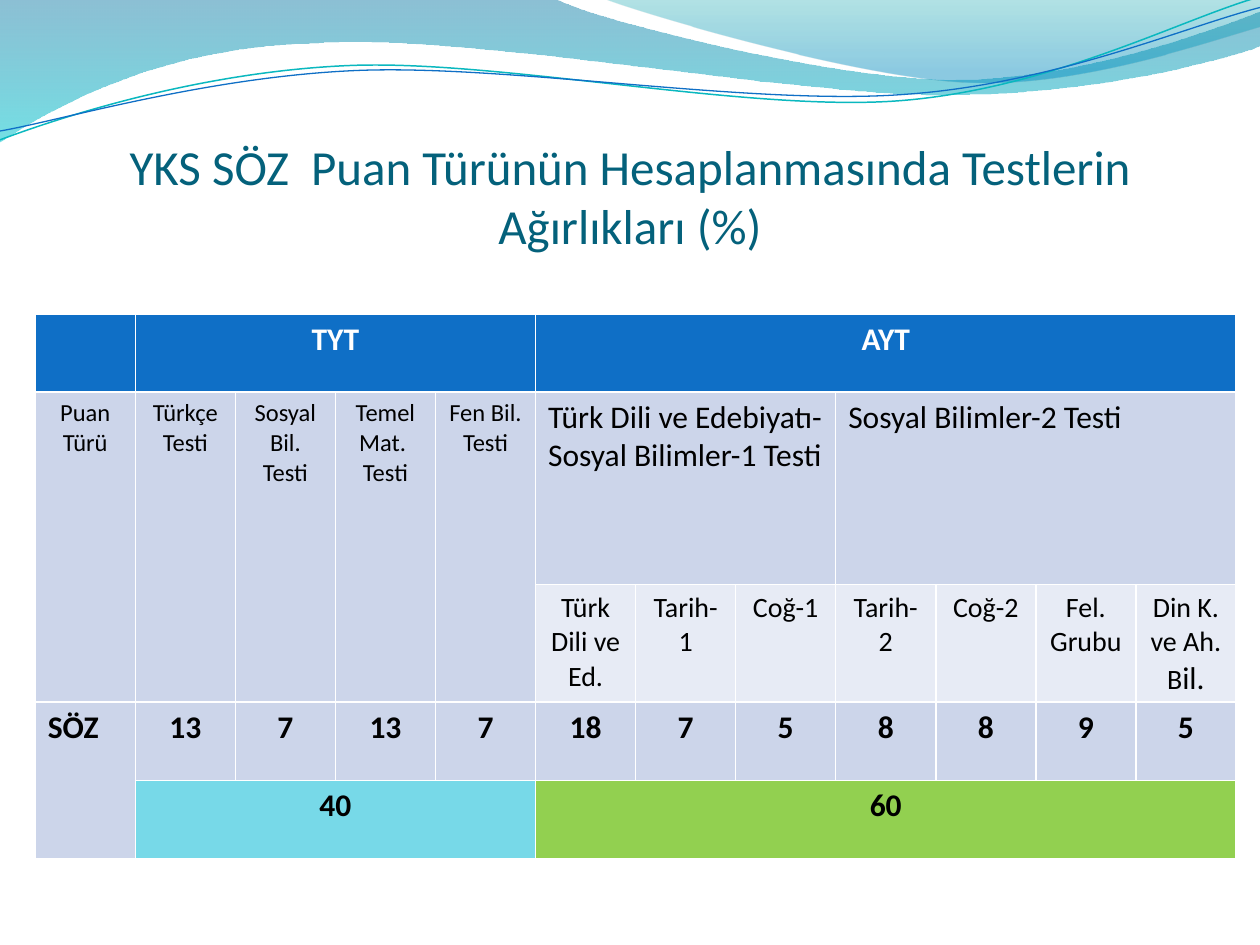
from math import cos, radians, sin

from lxml import etree
from pptx import Presentation
from pptx.dml.color import RGBColor
from pptx.enum.text import MSO_ANCHOR, PP_ALIGN
from pptx.oxml.ns import qn
from pptx.util import Inches, Pt

CENTER, LEFT, BOTTOM = PP_ALIGN.CENTER, PP_ALIGN.LEFT, MSO_ANCHOR.BOTTOM
FONT = "Calibri"
COLORS = {
    "title": "04617B", "header": "0F6FC6", "band": "CCD5EA", "pale": "E7EBF5",
    "tyt_total": "77D9E8", "ayt_total": "92D050", "white": "FFFFFF", "black": "000000",
    "teal_line": "0AB8BF", "wave_top": "0074A1", "wave_bottom": "00C6CF",
    "crest_top": "00A1A9", "crest_bottom": "008BBF",
}


def rgb(name):
    return RGBColor.from_string(COLORS[name])


def draw_curve(shapes, start, segments, close):
    points = [(Inches(s[i]), Inches(s[i + 1])) for s in segments for i in range(0, len(s), 2)]
    builder = shapes.build_freeform(Inches(start[0]), Inches(start[1]))
    builder.add_line_segments(points, close=close)
    shape = builder.convert_to_shape()
    shape.shadow.inherit = False
    lines = iter(list(shape._element.spPr.iter(qn("a:lnTo"))))
    for segment in segments:
        line = next(lines)
        if len(segment) == 6:
            line.addprevious(etree.Element(qn("a:cubicBezTo")))
            bezier = line.getprevious()
            for element in (line, next(lines), next(lines)):
                bezier.append(element[0])
                element.getparent().remove(element)
    return shape


presentation = Presentation()
presentation.slide_width = Inches(10)
presentation.slide_height = Inches(7.5)
slide = presentation.slides.add_slide(presentation.slide_layouts[6])

waves = [
    ((0, 0), [(4.4, -0.01), (4.76, 0.17, 6.64, 0.63, 7.58, 0.63),
              (8.53, 0.63, 9.58, 0.26, 10, 0.09), (10.01, 0.36),
              (9.83, 0.44, 8.7, 0.76, 7.46, 0.75), (6.22, 0.75, 3.82, 0.28, 2.57, 0.34),
              (1.29, 0.36, 0.46, 0.83, -0.01, 1.13), (0, 0)],
     [("wave_top", 0, 45), ("wave_bottom", 1, 55)]),
    ((4.79, -0.01), [(5.09, 0.11, 6.82, 0.62, 7.69, 0.65),
                     (8.56, 0.69, 9.61, 0.32, 10, 0.21), (10, 0), (4.79, -0.01)],
     [("crest_top", 0, 30), ("crest_bottom", 0.8, 45)]),
]
for start, segments, stops in waves:
    shape = draw_curve(slide.shapes, start, segments, True)
    shape.line.fill.background()
    shape.fill.gradient()
    shape.fill.gradient_angle = 270
    for stop, (color, position, _) in zip(shape.fill.gradient_stops, stops):
        stop.color.rgb = rgb(color)
        stop.position = position
    color_elements = shape._element.spPr.iter(qn("a:srgbClr"))
    for element, (_, _, opacity) in zip(color_elements, stops):
        etree.SubElement(element, qn("a:alpha"), val=str(opacity * 1000))

tilt = 2.7
ribbons = [
    ([(0, 1.11), (0.48, 0.93), (1.58, 0.57), (2.77, 0.52), (3.95, 0.47), (5.93, 0.89),
      (7.13, 0.8), (8.33, 0.71), (9.38, 0.15), (9.98, -0.02)], (4.99, 0.58), "teal_line", 0.85),
    ([(0, 1.04), (0.47, 0.96), (1.64, 0.61), (2.83, 0.56), (4.03, 0.51), (5.97, 0.84),
      (7.17, 0.75), (8.36, 0.67), (9.41, 0.21), (10, 0.06)], (5, 0.59), "header", 0.75),
]
for points, (center_x, center_y), color, width in ribbons:
    cosine, sine = cos(radians(tilt)), sin(radians(tilt))
    level = [(center_x + (x - center_x) * cosine - (y - center_y) * sine,
              center_y + (x - center_x) * sine + (y - center_y) * cosine) for x, y in points]
    segments = [sum(level[i:i + 3], ()) for i in range(1, len(level), 3)]
    shape = draw_curve(slide.shapes, level[0], segments, False)
    shape.rotation = 360 - tilt
    shape.fill.background()
    shape.line.color.rgb = rgb(color)
    shape.line.width = Pt(width)

title = slide.shapes.add_textbox(Inches(0.5), Inches(0.77), Inches(9), Inches(1.25))
frame = title.text_frame
frame.word_wrap = True
frame.vertical_anchor = BOTTOM
frame.margin_left = frame.margin_right = frame.margin_bottom = 0
frame.margin_top = Inches(0.05)
paragraph = frame.paragraphs[0]
paragraph.text = "YKS SÖZ  Puan Türünün Hesaplanmasında Testlerin Ağırlıkları (%)"
paragraph.alignment = CENTER
paragraph.font.name = FONT
paragraph.font.size = Pt(28)
paragraph.font.color.rgb = rgb("title")

row_heights = [0.62, 1.53, 0.62, 0.62, 0.62]
column_count = 12
table_frame = slide.shapes.add_table(len(row_heights), column_count, Inches(0.28), Inches(2.49),
                                     Inches(9.53), Inches(4.33))
table = table_frame.table
for row, height in zip(table.rows, row_heights):
    row.height = Inches(height)
table_frame.height = Inches(4.33)

row_fills = ["header", "band", "pale", "band", "band"]
for row_index, fill in enumerate(row_fills):
    for column_index in range(column_count):
        cell = table.cell(row_index, column_index)
        cell.fill.solid()
        cell.fill.fore_color.rgb = rgb(fill)

tests = ["Puan Türü", "Türkçe Testi", "Sosyal Bil. Testi", "Temel Mat. \nTesti", "Fen Bil.\nTesti"]
subjects = ["Türk Dili ve Ed.", "Tarih-1", "Coğ-1", "Tarih-2", "Coğ-2", "Fel. Grubu", "Din K. ve Ah. B"]
weights = [13, 7, 13, 7, 18, 7, 5, 8, 8, 9, 5]
entries = [
    (0, 1, 1, 4, "TYT", 18, True, CENTER),
    (0, 5, 1, 7, "AYT", 18, True, CENTER),
    (1, 5, 1, 3, "Türk Dili ve Edebiyatı- Sosyal Bilimler-1 Testi", 18, False, LEFT),
    (1, 8, 1, 4, "Sosyal Bilimler-2 Testi", 18, False, LEFT),
    (3, 0, 2, 1, "SÖZ", 18, True, LEFT),
    (4, 1, 1, 4, "40", 18, True, CENTER),
    (4, 5, 1, 7, "60", 18, True, CENTER),
]
entries += [(1, i, 2, 1, text, 14, False, CENTER) for i, text in enumerate(tests)]
entries += [(2, i, 1, 1, text, 16, False, CENTER) for i, text in enumerate(subjects, 5)]
entries += [(3, i, 1, 1, str(value), 18, True, CENTER) for i, value in enumerate(weights, 1)]
for row, column, row_span, column_span, text, size, bold, alignment in entries:
    cell = table.cell(row, column)
    if row_span * column_span > 1:
        cell.merge(table.cell(row + row_span - 1, column + column_span - 1))
    cell.text = text
    for paragraph in cell.text_frame.paragraphs:
        paragraph.alignment = alignment
        paragraph.font.name = FONT
        paragraph.font.size = Pt(size)
        paragraph.font.bold = bold
        paragraph.font.color.rgb = rgb("white" if row == 0 else "black")

run = table.cell(2, 11).text_frame.paragraphs[0].add_run()
run.text = "il."
run.font.size = Pt(18)
for column, color in [(1, "tyt_total"), (5, "ayt_total")]:
    table.cell(4, column).fill.fore_color.rgb = rgb(color)

presentation.save("out.pptx")
